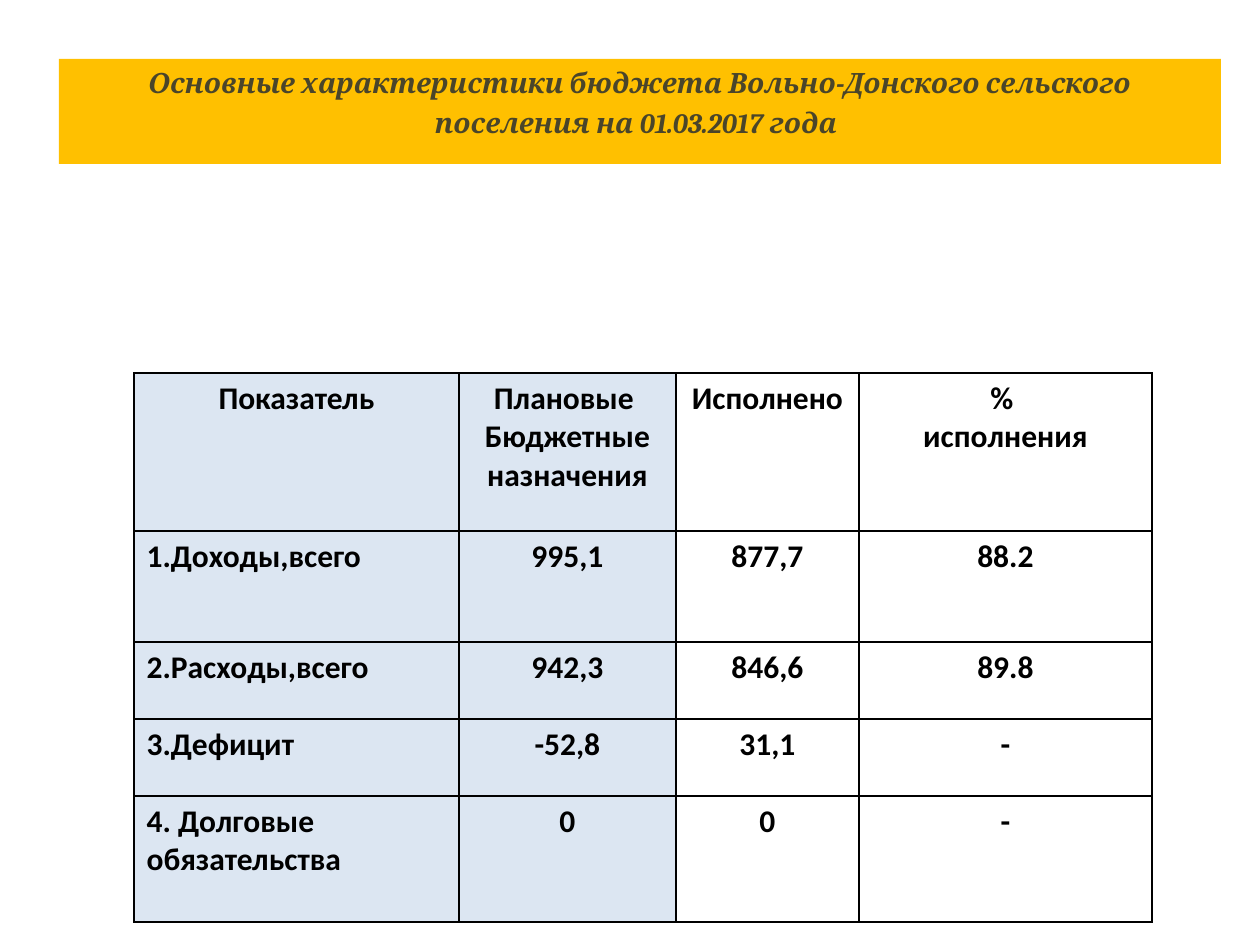
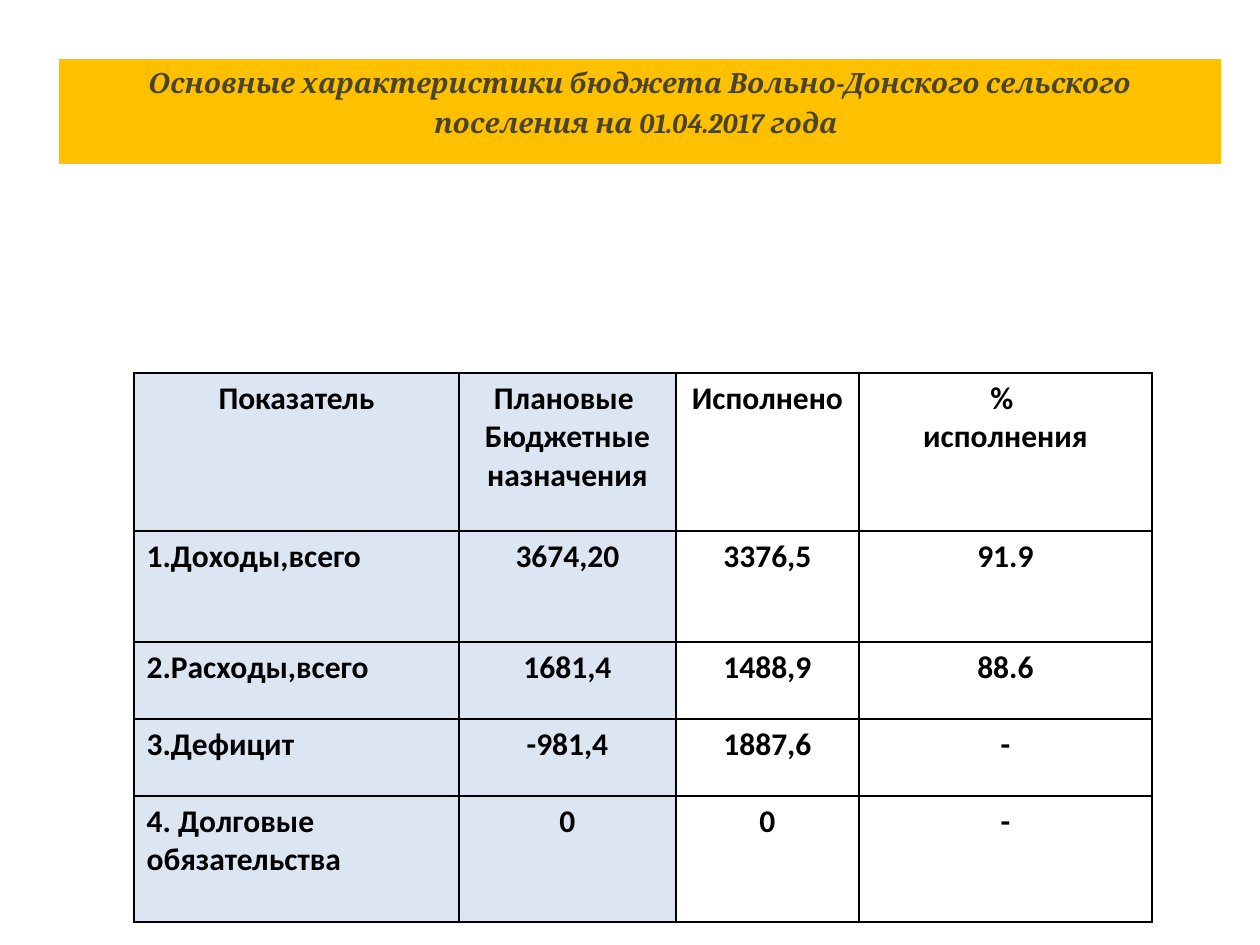
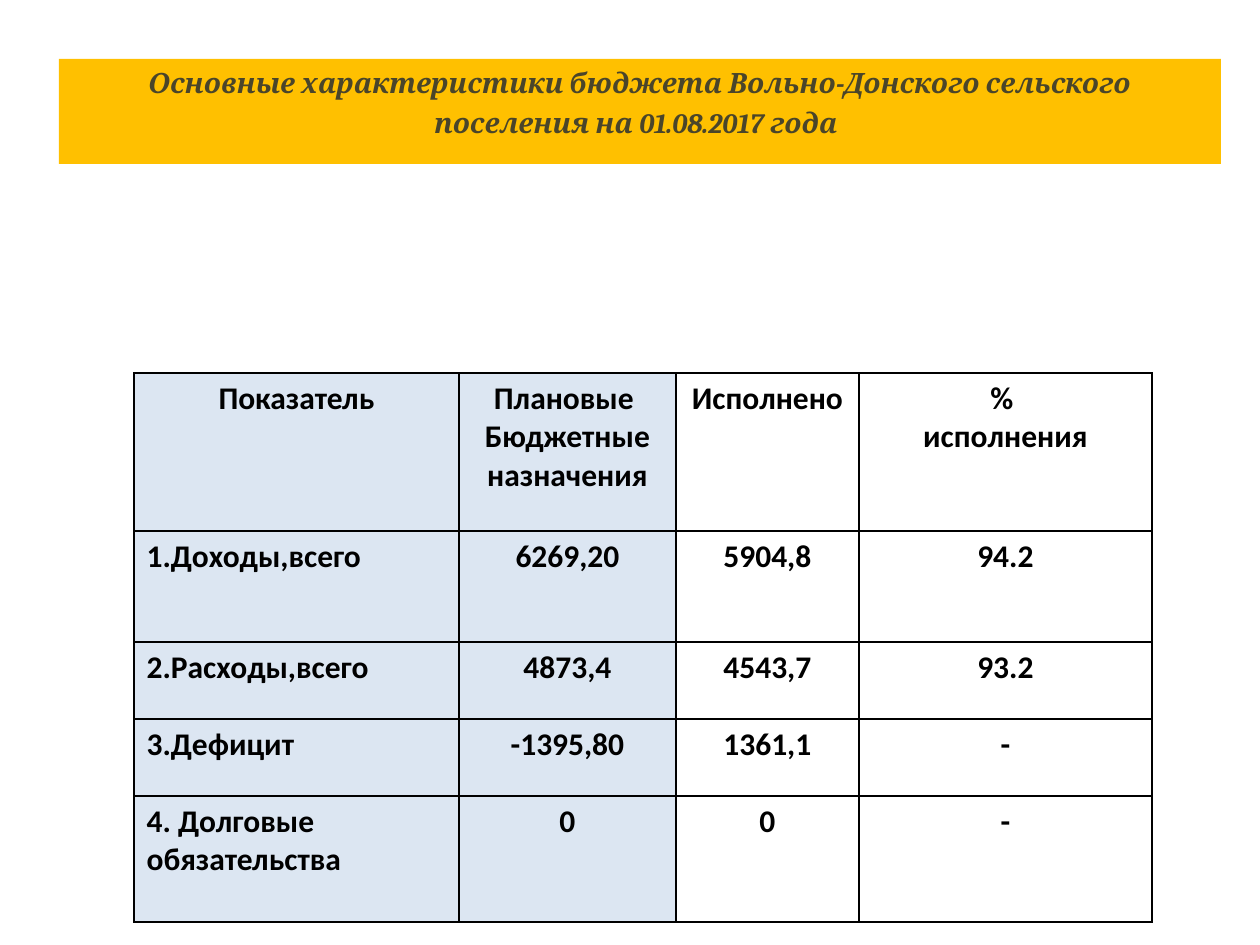
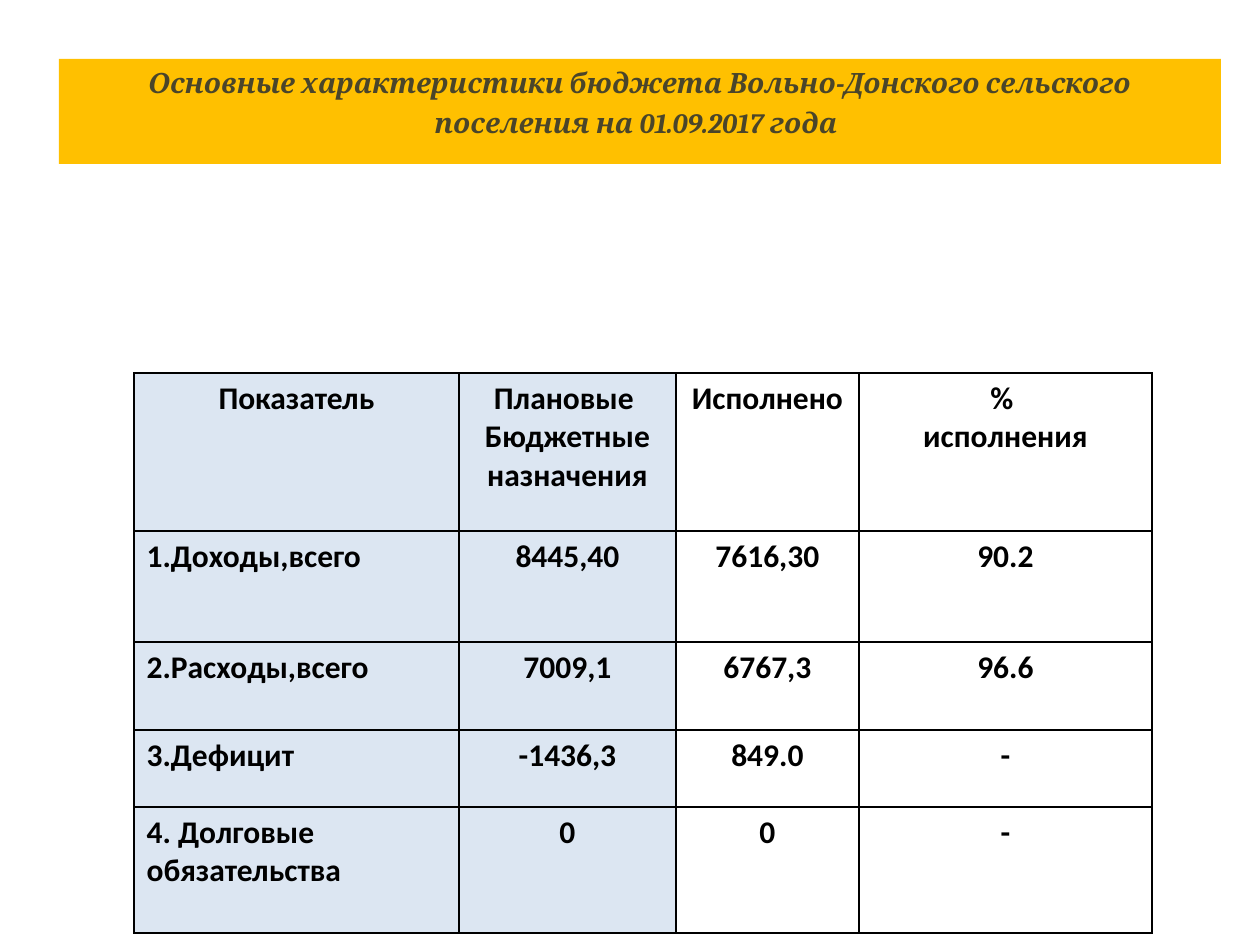
from lxml import etree
from pptx import Presentation
from pptx.dml.color import RGBColor
from pptx.enum.text import MSO_ANCHOR, MSO_AUTO_SIZE, PP_ALIGN
from pptx.oxml.ns import qn
from pptx.util import Emu, Pt

CENTER, LEFT = PP_ALIGN.CENTER, PP_ALIGN.LEFT
TOP = MSO_ANCHOR.TOP
GROW = MSO_AUTO_SIZE.SHAPE_TO_FIT_TEXT

PX = 914400 / 126
PAGE_WIDTH, PAGE_HEIGHT = 1260, 945
TITLE_BOX = (59, 59, 1162, 88)
TABLE_LEFT, TABLE_TOP = 134, 373
COLUMN_WIDTHS = (325, 217, 183, 293)
ROW_HEIGHTS = (158, 111, 77, 77, 126)
TALL_EXPENSE_ROW_HEIGHTS = (158, 111, 88, 77, 126)
BORDER_WIDTH = Pt(1)

AMBER = RGBColor(0xFF, 0xC0, 0x00)
OLIVE = RGBColor(0x4A, 0x45, 0x2A)
PALE_BLUE = RGBColor(0xDC, 0xE6, 0xF2)
BLACK = RGBColor(0x00, 0x00, 0x00)

TITLE_FONT, TABLE_FONT = "Cambria", "Calibri"
TITLE = "Основные характеристики бюджета Вольно-Донского сельского поселения на {} года"
HEADER = ("Показатель", "Плановые \nБюджетные назначения", "Исполнено", "% \nисполнения")
INDICATORS = ("1.Доходы,всего", "2.Расходы,всего", "3.Дефицит", "4. Долговые обязательства")
DEBT = ("0", "0", "-")
SHADED_COLUMNS = 2

# Date, row heights, then planned, executed and percentage for each indicator
REPORTS = (
    ("01.03.2017", ROW_HEIGHTS,
     (("995,1", "877,7", "88.2"), ("942,3", "846,6", "89.8"), ("-52,8", "31,1", "-"), DEBT)),
    ("01.04.2017", ROW_HEIGHTS,
     (("3674,20", "3376,5", "91.9"), ("1681,4", "1488,9", "88.6"), ("-981,4", "1887,6", "-"), DEBT)),
    ("01.08.2017", ROW_HEIGHTS,
     (("6269,20", "5904,8", "94.2"), ("4873,4", "4543,7", "93.2"), ("-1395,80", "1361,1", "-"), DEBT)),
    ("01.09.2017", TALL_EXPENSE_ROW_HEIGHTS,
     (("8445,40", "7616,30", "90.2"), ("7009,1", "6767,3", "96.6"), ("-1436,3", "849.0", "-"), DEBT)),
)


def px(length):
    return Emu(round(length * PX))


def style_font(font, name, size, color):
    font.name = name
    font.size = Pt(size)
    font.bold = True
    font.color.rgb = color


def add_title(page, box, text):
    title = page.shapes.title
    title.left, title.top, title.width, title.height = map(px, box)
    title.fill.solid()
    title.fill.fore_color.rgb = AMBER
    frame = title.text_frame
    frame.word_wrap = True
    frame.auto_size = GROW
    frame.vertical_anchor = TOP
    para = frame.paragraphs[0]
    para.alignment = CENTER
    style_font(para.font, TITLE_FONT, 16, OLIVE)
    para.font.italic = True
    para.add_run().text = text
    # The larger closing space sets the height of the last line
    closing_space = para.add_run()
    closing_space.text = " "
    closing_space.font.size = Pt(20)


def add_borders(cell):
    properties = cell._tc.get_or_add_tcPr()
    for side in ("a:lnL", "a:lnR", "a:lnT", "a:lnB"):
        line = etree.SubElement(properties, qn(side), w=str(BORDER_WIDTH))
        fill = etree.SubElement(line, qn("a:solidFill"))
        etree.SubElement(fill, qn("a:srgbClr"), val=str(BLACK))


def fill_cell(cell, text, alignment, shaded):
    add_borders(cell)
    if shaded:
        cell.fill.solid()
        cell.fill.fore_color.rgb = PALE_BLUE
    else:
        cell.fill.background()
    cell.text = text
    for para in cell.text_frame.paragraphs:
        para.alignment = alignment
        style_font(para.font, TABLE_FONT, 18, BLACK)


def add_budget_table(page, left, top, row_heights, values):
    rows = [HEADER] + [(name, *figures) for name, figures in zip(INDICATORS, values)]
    box = map(px, (left, top, sum(COLUMN_WIDTHS), sum(row_heights)))
    table = page.shapes.add_table(len(rows), len(HEADER), *box).table
    table.first_row = False
    table.horz_banding = False
    for column, width in zip(table.columns, COLUMN_WIDTHS):
        column.width = px(width)
    for row, height in zip(table.rows, row_heights):
        row.height = px(height)
    for row_index, texts in enumerate(rows):
        for column_index, text in enumerate(texts):
            is_label = row_index > 0 and column_index == 0
            fill_cell(table.cell(row_index, column_index), text,
                      LEFT if is_label else CENTER, column_index < SHADED_COLUMNS)


def add_report_slide(deck, date, row_heights, values):
    page = deck.slides.add_slide(deck.slide_layouts.get_by_name("Title Only"))
    add_title(page, TITLE_BOX, TITLE.format(date))
    add_budget_table(page, TABLE_LEFT, TABLE_TOP, row_heights, values)


def main():
    deck = Presentation()
    deck.slide_width, deck.slide_height = px(PAGE_WIDTH), px(PAGE_HEIGHT)
    for report in REPORTS:
        add_report_slide(deck, *report)
    deck.save("out.pptx")


if __name__ == "__main__":
    main()
